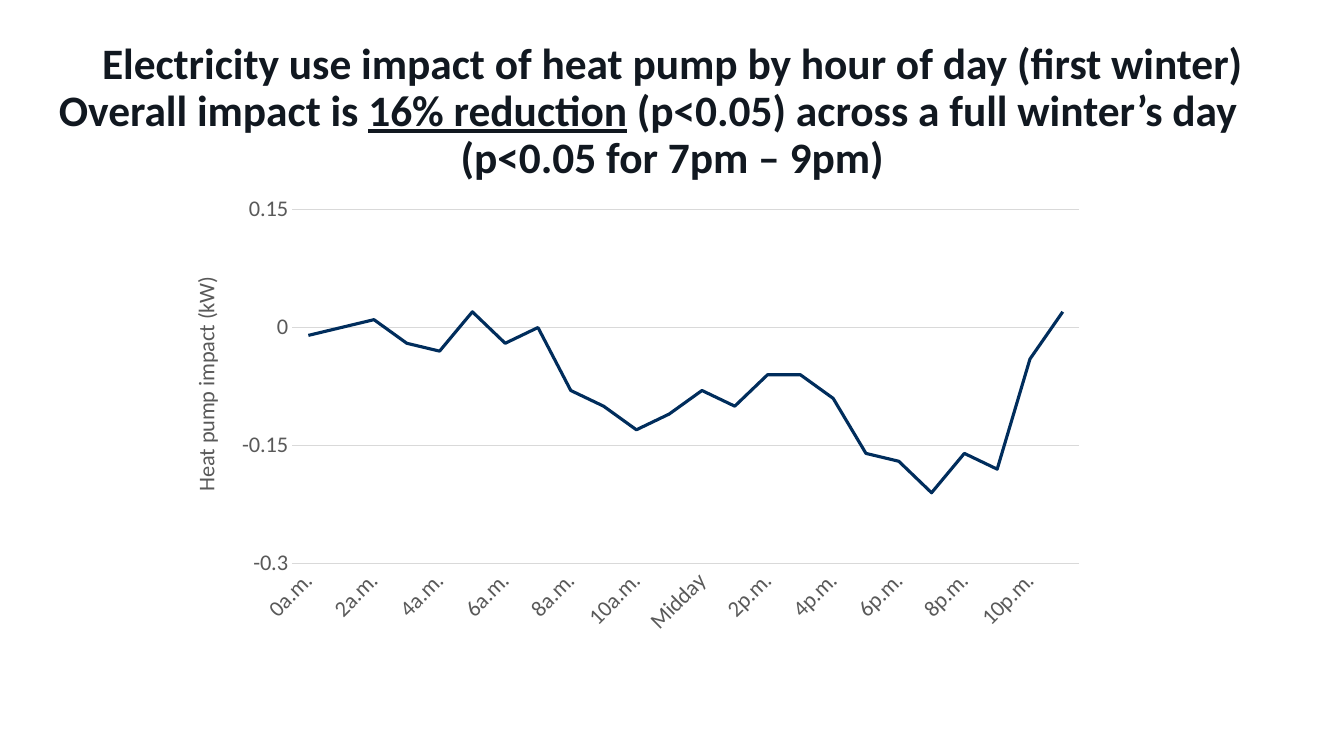
"""Build the slide on the hourly electricity impact of a heat pump."""
import lxml.etree
import pptx
import pptx.chart.data
import pptx.dml.color
import pptx.enum.chart
import pptx.enum.text
import pptx.oxml.ns
import pptx.util


def style(font, size, hue, bold=False):
    font.name, font.size, font.bold = "Calibri", pptx.util.Pt(size), bold
    font.color.rgb = pptx.dml.color.RGBColor.from_string(hue)


def place(host, spot, rules):
    name = pptx.oxml.ns.qn
    for old in host.findall(name("c:layout")):
        host.remove(old)
    layout = lxml.etree.Element(name("c:layout"))
    manual = lxml.etree.SubElement(layout, name("c:manualLayout"))
    for tag, val in rules.items():
        lxml.etree.SubElement(manual, name(f"c:{tag}"), val=str(val))
    host.insert(spot, layout)


deck = pptx.Presentation()
deck.slide_width = pptx.util.Inches(13.33)
deck.slide_height = pptx.util.Inches(7.5)
wide, high = deck.slide_width, deck.slide_height
slide = deck.slides.add_slide(deck.slide_layouts[5])

title = slide.shapes.title
title.left, title.top = int(wide * 0.019), int(high * 0.099)
title.width, title.height = int(wide * 0.962), int(high * 0.099)
frame = title.text_frame
frame.word_wrap = True
frame.auto_size = pptx.enum.text.MSO_AUTO_SIZE.NONE
frame.vertical_anchor = pptx.enum.text.MSO_ANCHOR.MIDDLE
frame.margin_left = frame.margin_right = frame.margin_top = frame.margin_bottom = 0

lines = [
    ["Electricity use impact of heat pump by hour of day (first winter)"],
    ["Overall impact is ", "16% reduction", " (p<0.05) across a full winter’s day"],
    ["(p<0.05 for 7pm – 9pm)"],
]
for row, parts in enumerate(lines):
    para = frame.paragraphs[0] if row == 0 else frame.add_paragraph()
    para.alignment = pptx.enum.text.PP_ALIGN.CENTER
    para.line_spacing = 0.9
    para.space_before = pptx.util.Pt(0)
    para.space_after = pptx.util.Pt(12 if row == 2 else 0)
    inset = pptx.util.Inches(0.48 if row == 1 else 0)
    para._p.get_or_add_pPr().set("marR", str(inset))
    style(para.font, 31, "111820", True)
    for col, text in enumerate(parts):
        run = para.add_run()
        run.text = text
        if col == 1:
            run.font.underline = True

hours = [f"{hour % 12}{'a' if hour < 12 else 'p'}.m." for hour in range(24)]
hours[12] = "Midday"
data = pptx.chart.data.CategoryChartData()
data.categories = hours
data.add_series("Series 1", [
    -0.01, 0, 0.01, -0.02, -0.03, 0.02, -0.02, 0,
    -0.08, -0.1, -0.13, -0.11, -0.08, -0.1, -0.06, -0.06,
    -0.09, -0.16, -0.17, -0.21, -0.16, -0.18, -0.04, 0.02,
])
chart = slide.shapes.add_chart(
    pptx.enum.chart.XL_CHART_TYPE.LINE, int(wide * 0.125), int(high * 0.181),
    int(wide * 0.699), int(high * 0.692), data).chart
chart.has_legend = chart.has_title = False
style(chart.font, 10, "000000")

plot = chart.plots[0]
plot.vary_by_categories = False
curve = plot.series[0]
curve.smooth = False
curve.marker.style = pptx.enum.chart.XL_MARKER_STYLE.NONE

across, up = chart.category_axis, chart.value_axis
for axis in (across, up):
    axis.major_tick_mark = axis.minor_tick_mark = pptx.enum.chart.XL_TICK_MARK.NONE
    axis.tick_label_position = pptx.enum.chart.XL_TICK_LABEL_POSITION.NEXT_TO_AXIS
    style(axis.tick_labels.font, 16, "595959")
across.has_major_gridlines = False
across._element.txPr.bodyPr.set("rot", "-2700000")
skip = lxml.etree.Element(pptx.oxml.ns.qn("c:tickLblSkip"), val="2")
across._element.find(pptx.oxml.ns.qn("c:noMultiLvlLbl")).addprevious(skip)
up.crosses = pptx.enum.chart.XL_AXIS_CROSSES.MINIMUM
up.minimum_scale, up.maximum_scale, up.major_unit = -0.3, 0.15, 0.15
up.tick_labels.number_format = "General"
up.tick_labels.number_format_is_linked = False
up.format.line.fill.background()
strokes = [(curve, "002D5C", 2.25), (across, "D9D9D9", 0.75),
           (up.major_gridlines, "D9D9D9", 0.75)]
for part, hue, size in strokes:
    part.format.line.color.rgb = pptx.dml.color.RGBColor.from_string(hue)
    part.format.line.width = pptx.util.Pt(size)

label = up.axis_title.text_frame
label.text = "Heat pump impact (kW)"
style(label.paragraphs[0].font, 16, "595959")
label._txBody.bodyPr.set("rot", "-5400000")
label._txBody.bodyPr.set("vert", "horz")

edge = {"xMode": "edge", "yMode": "edge"}
place(up.axis_title._element, 1, {**edge, "x": 0.02, "y": 0.26})
place(chart._chartSpace.chart.plotArea, 0, {
    "layoutTarget": "inner", **edge, "x": 0.132, "y": 0.139, "w": 0.838, "h": 0.677})

deck.save("out.pptx")
